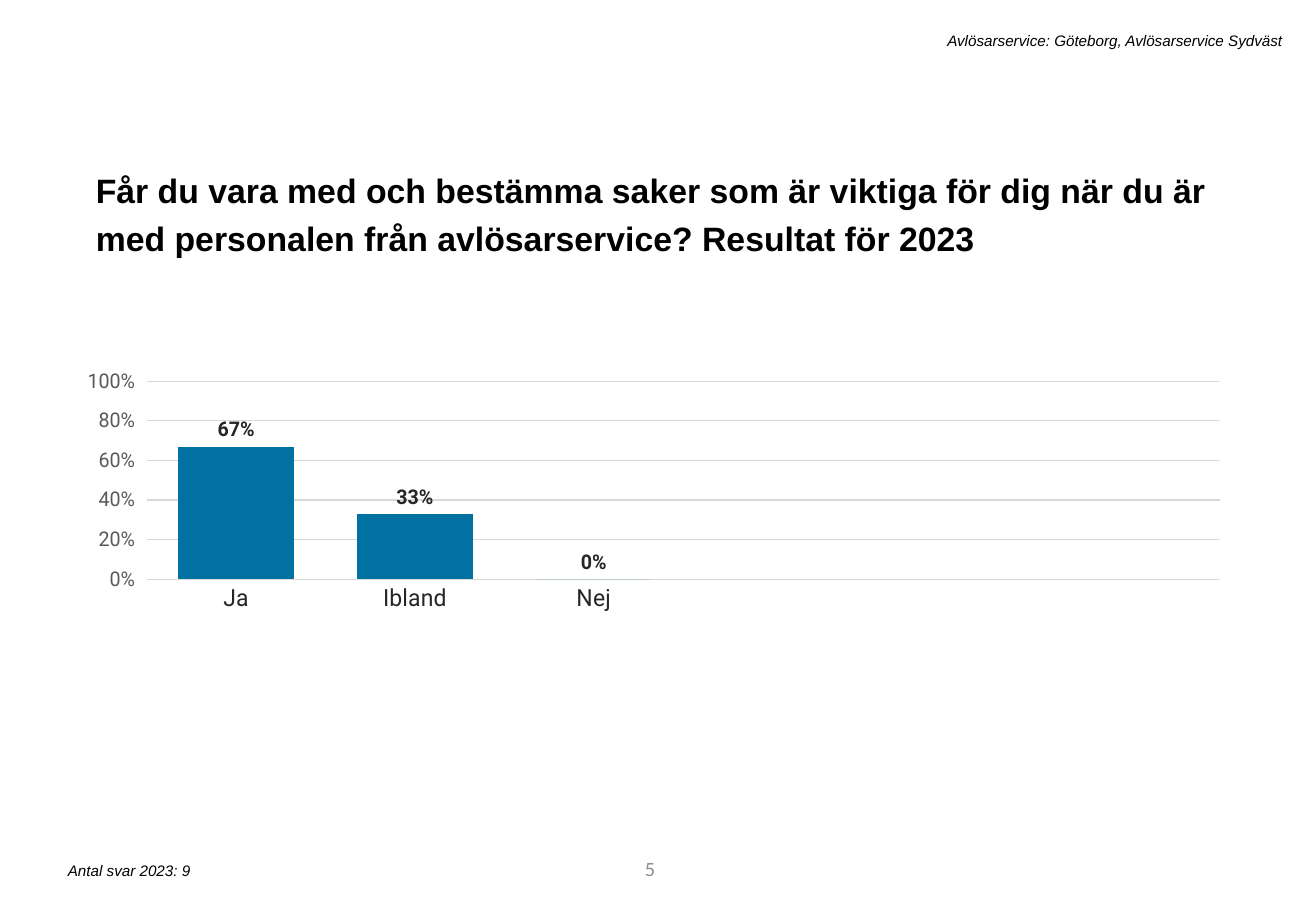
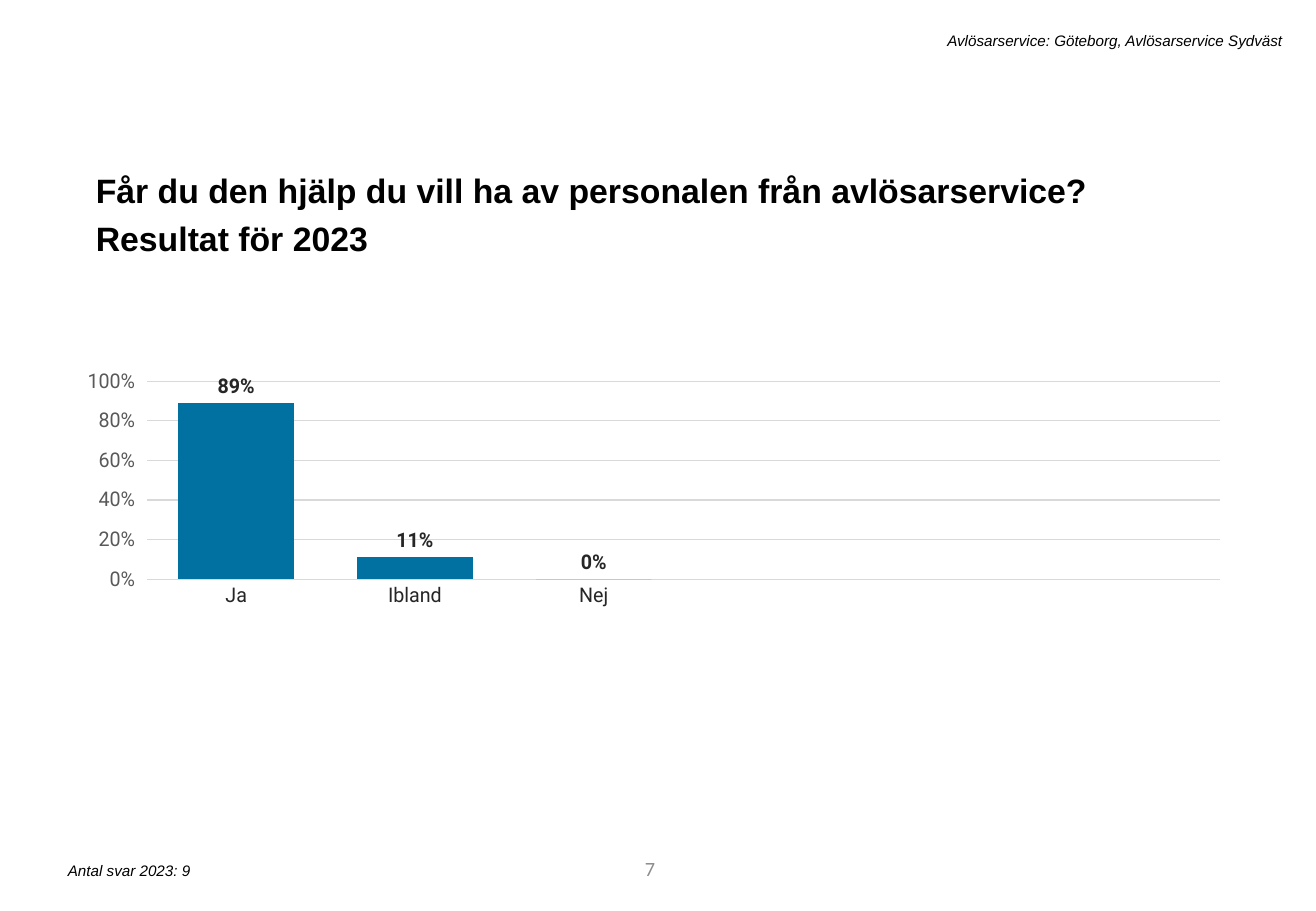
from lxml import etree
from pptx import Presentation
from pptx import util as u
from pptx.chart.data import CategoryChartData
from pptx.dml.color import RGBColor
from pptx.enum import chart as charts, text
from pptx.oxml.ns import qn

# Content
HEADER = "Avlösarservice: Göteborg, Avlösarservice Sydväst"
FOOTER = "Antal svar 2023: 9"
ANSWERS = ["Ja", "Ibland", "Nej", "", "", ""]
QUESTIONS = [
    dict(number="5", answer_size=14, shares=[0.67, 0.33, 0],
         title="Får du vara med och bestämma saker som är viktiga för dig när du är "
               "med personalen från avlösarservice? Resultat för 2023"),
    dict(number="7", answer_size=12, shares=[0.89, 0.11, 0],
         title="Får du den hjälp du vill ha av personalen från avlösarservice? "
               "Resultat för 2023"),
]

# Shared look
BLACK, DARK, GREY, PALE, GRID, BLUE = (
    "000000", "262626", "595959", "8C8C8C", "D9D9D9", "0071A1")
SLIDE_SIZE = 10.83, 7.5
TITLE_BOX = 0.69, 1.28, 9.4, 0.47
HEADER_BOX = 1.79, 0.21, 8.86, 0.25
FOOTER_BOX = 0.46, 7.04, 4.41, 0.25
NUMBER_BOX = 3.05, 6.95, 2.44, 0.4
CHART_BOX = 0.72, 2.53, 9.4, 3.95
PLOT_AREA = dict(x=0.025, y=0.154, w=0.966, h=0.413)  # shares of the chart
RIGHT = text.PP_ALIGN.RIGHT


def color(value):
    return RGBColor.from_string(value)


def inches(box):
    return [u.Inches(length) for length in box]


def style(font, size, shade, name="Roboto", bold=False, italic=False):
    font.size, font.name, font.bold, font.italic = u.Pt(size), name, bold, italic
    font.color.rgb = color(shade)


def rule(line):
    line.color.rgb = color(GRID)
    line.width = u.Pt(0.75)


def add_text(page, box, words, size, shade=BLACK, name="Arial", align=None, **emphasis):
    frame = page.shapes.add_textbox(*inches(box)).text_frame
    frame.word_wrap = True
    para = frame.paragraphs[0]
    para.text = words
    para.alignment = align
    style(para.font, size, shade, name, **emphasis)
    return frame


def place_plot(chart):
    """Fix the inner plot area at the shares in PLOT_AREA."""
    area = chart.plots[0]._element.getparent()
    for old in area.findall(qn("c:layout")):
        area.remove(old)
    layout = etree.Element(qn("c:layout"))
    manual = etree.SubElement(layout, qn("c:manualLayout"))
    settings = dict(layoutTarget="inner", xMode="edge", yMode="edge", **PLOT_AREA)
    for key, value in settings.items():
        etree.SubElement(manual, qn("c:" + key)).set("val", str(value))
    area.insert(0, layout)


def add_answer_chart(page, shares, answer_size):
    data = CategoryChartData()
    data.categories = ANSWERS
    data.add_series("Series 1", shares + [None] * (len(ANSWERS) - len(shares)))
    chart = page.shapes.add_chart(
        charts.XL_CHART_TYPE.COLUMN_CLUSTERED, *inches(CHART_BOX), data).chart
    chart.has_legend = chart.has_title = False
    style(chart.font, 10, BLACK)
    place_plot(chart)

    # Axes
    answers, percent = chart.category_axis, chart.value_axis
    answers.major_tick_mark = charts.XL_TICK_MARK.NONE
    style(answers.tick_labels.font, answer_size, DARK)
    rule(answers.format.line)
    percent.minimum_scale, percent.maximum_scale, percent.major_unit = 0, 1, 0.2
    percent.major_tick_mark = charts.XL_TICK_MARK.OUTSIDE
    percent.tick_labels.number_format = "0%"
    percent.tick_labels.number_format_is_linked = False
    style(percent.tick_labels.font, 12, GREY)
    percent.format.line.fill.background()
    rule(percent.major_gridlines.format.line)

    # Columns and their labels
    plot = chart.plots[0]
    plot.gap_width, plot.vary_by_categories = 55, False
    fill = plot.series[0].format.fill
    fill.solid()
    fill.fore_color.rgb = color(BLUE)
    labels = plot.series[0].data_labels
    labels.show_value = True
    labels.position = charts.XL_LABEL_POSITION.OUTSIDE_END
    labels.number_format, labels.number_format_is_linked = "0%", False
    style(labels.font, 12, DARK, bold=True)


def add_question(deck, question):
    page = deck.slides.add_slide(deck.slide_layouts[6])
    number = add_text(page, NUMBER_BOX, question["number"], 12, PALE, "Calibri", RIGHT)
    number.vertical_anchor = text.MSO_ANCHOR.MIDDLE
    add_answer_chart(page, question["shares"], question["answer_size"])
    title = add_text(page, TITLE_BOX, question["title"], 20, bold=True)
    title.paragraphs[0].line_spacing = 1.2
    title.paragraphs[0].space_before = u.Pt(10)
    header = add_text(page, HEADER_BOX, HEADER, 9, align=RIGHT, italic=True)
    footer = add_text(page, FOOTER_BOX, FOOTER, 9, italic=True)
    for frame in (title, header, footer):
        frame.auto_size = text.MSO_AUTO_SIZE.SHAPE_TO_FIT_TEXT


def main():
    deck = Presentation()
    deck.slide_width, deck.slide_height = inches(SLIDE_SIZE)
    for question in QUESTIONS:
        add_question(deck, question)
    deck.save("out.pptx")


if __name__ == "__main__":
    main()
